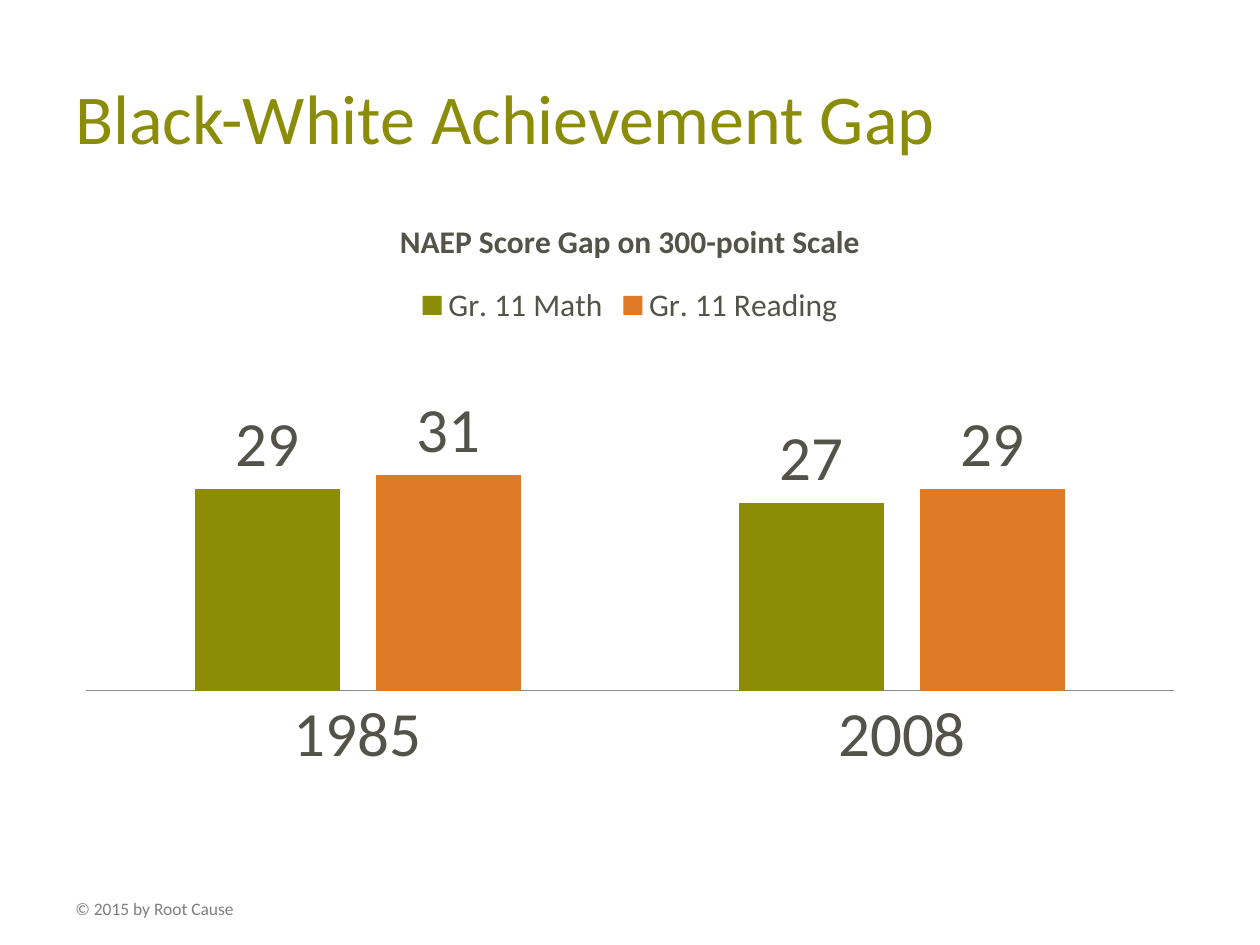
from dataclasses import dataclass

from pptx import Presentation
from pptx.chart.data import CategoryChartData
from pptx.dml.color import RGBColor
from pptx.enum import chart as ch, text
from pptx.util import Inches, Pt

# Content
HEADING = "Black-White Achievement Gap"
COPYRIGHT = "© 2015 by Root Cause"
CHART_TITLE = "NAEP Score Gap on 300-point Scale"
YEARS = ["1985", "2008"]
SCORE_GAPS = {"Gr. 11 Math": [29, 27], "Gr. 11 Reading": [31, 29]}


@dataclass(frozen=True)
class Theme:
    font: str = "Calibri"
    olive: str = "8B8D09"
    orange: str = "DF7A26"
    ink: str = "535349"
    grey: str = "7F7F7F"
    axis: str = "8C8C86"
    heading: int = 40
    figures: int = 36
    legend: int = 18
    footer: int = 10


THEME = Theme()


def style(font, size, color, bold=False):
    font.name = THEME.font
    font.size = Pt(size)
    font.bold = bold
    font.color.rgb = RGBColor.from_string(color)


def add_text(slide, box, words, size, color, anchor):
    frame = slide.shapes.add_textbox(*map(Inches, box)).text_frame
    frame.word_wrap = True
    frame.vertical_anchor = anchor
    frame.text = words
    style(frame.paragraphs[0].font, size, color)


def add_gap_chart(slide, box):
    data = CategoryChartData()
    data.categories = YEARS
    for subject, gaps in SCORE_GAPS.items():
        data.add_series(subject, gaps)
    chart = slide.shapes.add_chart(
        ch.XL_CHART_TYPE.COLUMN_CLUSTERED, *map(Inches, box), data).chart
    style(chart.font, THEME.legend, THEME.ink)

    # Title and legend
    chart.has_title = True
    title = chart.chart_title
    title.include_in_layout = False
    title.text_frame.text = CHART_TITLE
    style(title.text_frame.paragraphs[0].font, THEME.legend, THEME.ink, bold=True)
    chart.has_legend = True
    chart.legend.position = ch.XL_LEGEND_POSITION.TOP
    chart.legend.include_in_layout = False
    style(chart.legend.font, THEME.legend, THEME.ink)

    # Axes
    years, scores = chart.category_axis, chart.value_axis
    years.major_tick_mark = ch.XL_TICK_MARK.NONE
    years.format.line.color.rgb = RGBColor.from_string(THEME.axis)
    style(years.tick_labels.font, THEME.figures, THEME.ink)
    scores.minimum_scale, scores.maximum_scale = 0, 50
    scores.has_major_gridlines = False
    scores.visible = False

    # Columns and their values
    plot = chart.plots[0]
    plot.vary_by_categories = False
    plot.gap_width, plot.overlap = 150, -25
    for series, color in zip(plot.series, (THEME.olive, THEME.orange)):
        series.format.fill.solid()
        series.format.fill.fore_color.rgb = RGBColor.from_string(color)
        labels = series.data_labels
        labels.show_value = True
        labels.position = ch.XL_LABEL_POSITION.OUTSIDE_END
        style(labels.font, THEME.figures, THEME.ink)


def main():
    deck = Presentation()
    deck.slide_width, deck.slide_height = Inches(10), Inches(7.5)
    slide = deck.slides.add_slide(deck.slide_layouts[6])
    add_text(slide, (0.5, 7.08, 1.67, 0.27), COPYRIGHT,
             THEME.footer, THEME.grey, text.MSO_ANCHOR.TOP)
    add_text(slide, (0.5, 0.3, 9, 1.25), HEADING,
             THEME.heading, THEME.olive, text.MSO_ANCHOR.MIDDLE)
    add_gap_chart(slide, (0.5, 1.55, 9, 4.68))
    deck.save("out.pptx")


if __name__ == "__main__":
    main()
